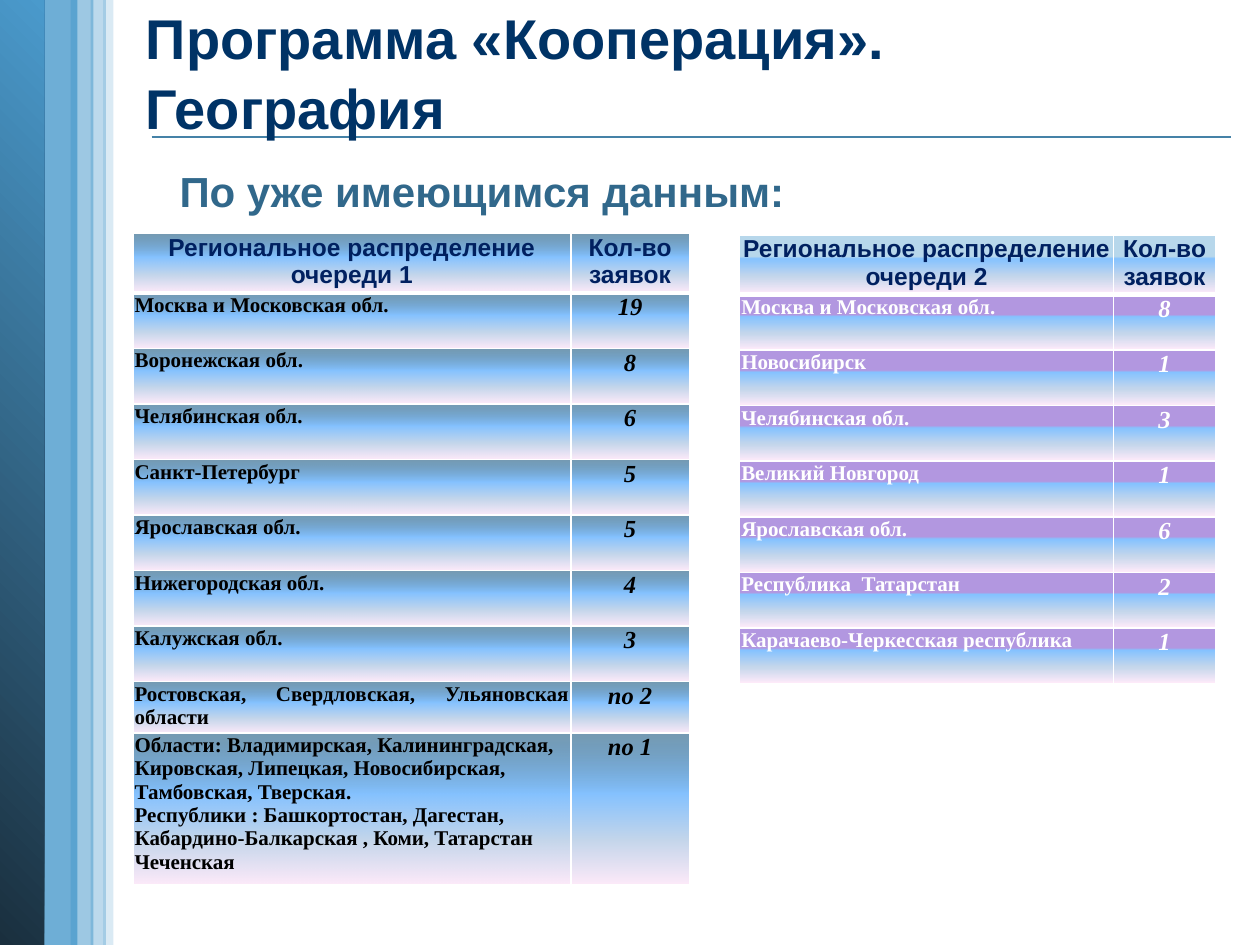
from lxml import etree
from pptx import Presentation
from pptx import util as u
from pptx.dml.color import RGBColor
from pptx.enum import shapes, text
from pptx.oxml import ns

ALIGN = text.PP_ALIGN
SANS, SERIF = "Arial", "Times New Roman"
WHITE, BLUE = "FFFFFF", "4A9ACC"
FADE = [(40, "85C2FF", 100), (70, "C4D6EB", 100), (100, "FFEBFA", 100)]


def rgb(value):
    return RGBColor.from_string(value)


def node(parent, tag, **attrs):
    return etree.SubElement(parent, ns.qn(tag), {k: str(v) for k, v in attrs.items()})


def color_node(parent, color, alpha=100):
    clr = node(parent, "a:srgbClr", val=color)
    if alpha < 100:
        node(clr, "a:alpha", val=alpha * 1000)


def gradient(parent, stops, angle):
    """Append a linear gradient; stops are (position %, colour, opacity %)."""
    grad = node(parent, "a:gradFill", rotWithShape=1)
    stop_list = node(grad, "a:gsLst")
    for position, color, alpha in stops:
        color_node(node(stop_list, "a:gs", pos=position * 1000), color, alpha)
    node(grad, "a:lin", ang=angle * 60000, scaled=0)
    return grad


class Deck:
    HEAD = dict(size=u.Pt(14), name=SANS, bold=True, italic=False)
    REGION = dict(size=u.Pt(12), name=SERIF, bold=True, italic=False)
    COUNT = dict(size=u.Pt(14), name=SERIF, bold=True, italic=True)

    def __init__(self, width, height):
        self.prs = Presentation()
        self.prs.slide_width, self.prs.slide_height = u.Pt(width), u.Pt(height)
        self.slide = self.prs.slides.add_slide(self.prs.slide_layouts[6])

    def put_text(self, frame, lines, style, color, align, **paragraph_format):
        for index, line in enumerate(lines):
            para = frame.paragraphs[0] if index == 0 else frame.add_paragraph()
            para.text = line
            para.alignment = align
            for key, value in paragraph_format.items():
                setattr(para, key, value)
            for run in para.runs:
                for key, value in style.items():
                    setattr(run.font, key, value)
                run.font.color.rgb = rgb(color)

    def bar(self, left, top, width, height, stops=None, angle=0, alpha=100):
        bar = self.slide.shapes.add_shape(
            shapes.MSO_SHAPE.RECTANGLE, *map(u.Pt, (left, top, width, height)))
        bar.shadow.inherit = False
        bar.line.fill.background()
        props = bar._element.spPr
        if stops:
            bar.fill.background()
            props.replace(props.find(ns.qn("a:noFill")), gradient(props, stops, angle))
        else:
            bar.fill.solid()
            bar.fill.fore_color.rgb = rgb(BLUE)
            node(props.find(ns.qn("a:solidFill"))[0], "a:alpha", val=alpha * 1000)

    def rule(self, x1, x2, y, color):
        rule = self.slide.shapes.add_connector(
            shapes.MSO_CONNECTOR.STRAIGHT, *map(u.Pt, (x1, y, x2, y)))
        rule.line.color.rgb = rgb(color)
        rule.line.width = u.Pt(1)
        node(rule._element.spPr, "a:effectLst")

    def label(self, box, line, size, color, anchor, **paragraph_format):
        frame = self.slide.shapes.add_textbox(*map(u.Pt, box)).text_frame
        frame.word_wrap = True
        frame.vertical_anchor = anchor
        style = dict(size=u.Pt(size), name=SANS, bold=True)
        self.put_text(frame, [line], style, color, ALIGN.LEFT, **paragraph_format)

    def cell(self, cell, lines, style, color, align, stops, bottom):
        for side, inset in dict(left=1, right=1, top=0.5, bottom=0).items():
            setattr(cell, f"margin_{side}", u.Pt(inset))
        self.put_text(cell.text_frame, lines, style, color, align)
        props = cell._tc.get_or_add_tcPr()
        for tag, width in dict(lnL=1, lnR=1, lnT=1, lnB=bottom).items():
            border = node(props, f"a:{tag}", w=u.Pt(width))
            color_node(node(border, "a:solidFill"), WHITE)
        gradient(props, stops, 90)

    def table(self, left, top, widths, heights, header, rows, color, head_stop, body_stop):
        grid = self.slide.shapes.add_table(
            len(heights), len(widths),
            *map(u.Pt, (left, top, sum(widths), sum(heights)))).table
        for column, width in zip(grid.columns, widths):
            column.width = u.Pt(width)
        for row, height in zip(grid.rows, heights):
            row.height = u.Pt(height)
        for c, title in enumerate((header, "Кол-во заявок")):
            self.cell(grid.cell(0, c), [title], self.HEAD, "002060", ALIGN.CENTER,
                      [head_stop] + FADE, 3)
        stops = [body_stop] + FADE
        for r, (region, count) in enumerate(rows, 1):
            lines = region.split("\n")
            align = ALIGN.JUSTIFY if len(lines) == 1 else ALIGN.LEFT
            self.cell(grid.cell(r, 0), lines, self.REGION, color, align, stops, 1)
            self.cell(grid.cell(r, 1), [count], self.COUNT, color, ALIGN.CENTER, stops, 1)


QUEUE_1 = [
    ("Москва и Московская обл.", "19"),
    ("Воронежская обл.", "8"),
    ("Челябинская обл.", "6"),
    ("Санкт-Петербург", "5"),
    ("Ярославская обл.", "5"),
    ("Нижегородская обл.", "4"),
    ("Калужская обл.", "3"),
    ("Ростовская, Свердловская, Ульяновская области", "по 2"),
    ("Области: Владимирская, Калининградская, Кировская, Липецкая, Новосибирская, "
     "Тамбовская, Тверская.\nРеспублики : Башкортостан, Дагестан, "
     "Кабардино-Балкарская , Коми, Татарстан Чеченская", "по 1"),
]
QUEUE_2 = [
    ("Москва и Московская обл.", "8"),
    ("Новосибирск", "1"),
    ("Челябинская обл.", "3"),
    ("Великий Новгород", "1"),
    ("Ярославская обл.", "6"),
    ("Республика  Татарстан", "2"),
    ("Карачаево-Черкесская республика", "1"),
]
ROW = 31.75


def main():
    deck = Deck(720, 540)

    # Left-hand stripes and the rule under the title
    deck.rule(86.7, 703.5, 78.5, "4582A7")
    deck.bar(21.6, 0, 22.6, 540, alpha=80)
    deck.bar(0, 0, 25.2, 540, stops=[(0, "1A2F3E", 100), (100, BLUE, 100)], angle=315)
    for left, width, alpha in ((59, 5.8, 20), (40.3, 13, 54), (51.8, 8.7, 37)):
        deck.bar(left, 0, width, 540, alpha=alpha)

    # Title and lead-in
    deck.label((76.3, 3.6, 635, 73.4), "Программа «Кооперация».\vГеография", 32,
               "003366", text.MSO_ANCHOR.MIDDLE, line_spacing=1.05)
    deck.label((95.5, 91, 600, 36), "По уже имеющимся данным:", 24, "31688B",
               text.MSO_ANCHOR.TOP)

    # Applications by region, one table per queue
    deck.table(75.9, 133.2, (250.3, 67.7), [ROW] * 8 + [27.4, 80],
               "Региональное распределение очереди 1", QUEUE_1, "000000",
               (0, "31688B", 66), (0, "31688B", 66))
    deck.table(422.6, 134.2, (213.8, 58.2), [ROW] * 8,
               "Региональное распределение очереди 2", QUEUE_2, WHITE,
               (36, "B7D7EB", 100), (36, "B297E0", 100))

    deck.prs.save("out.pptx")


if __name__ == "__main__":
    main()
